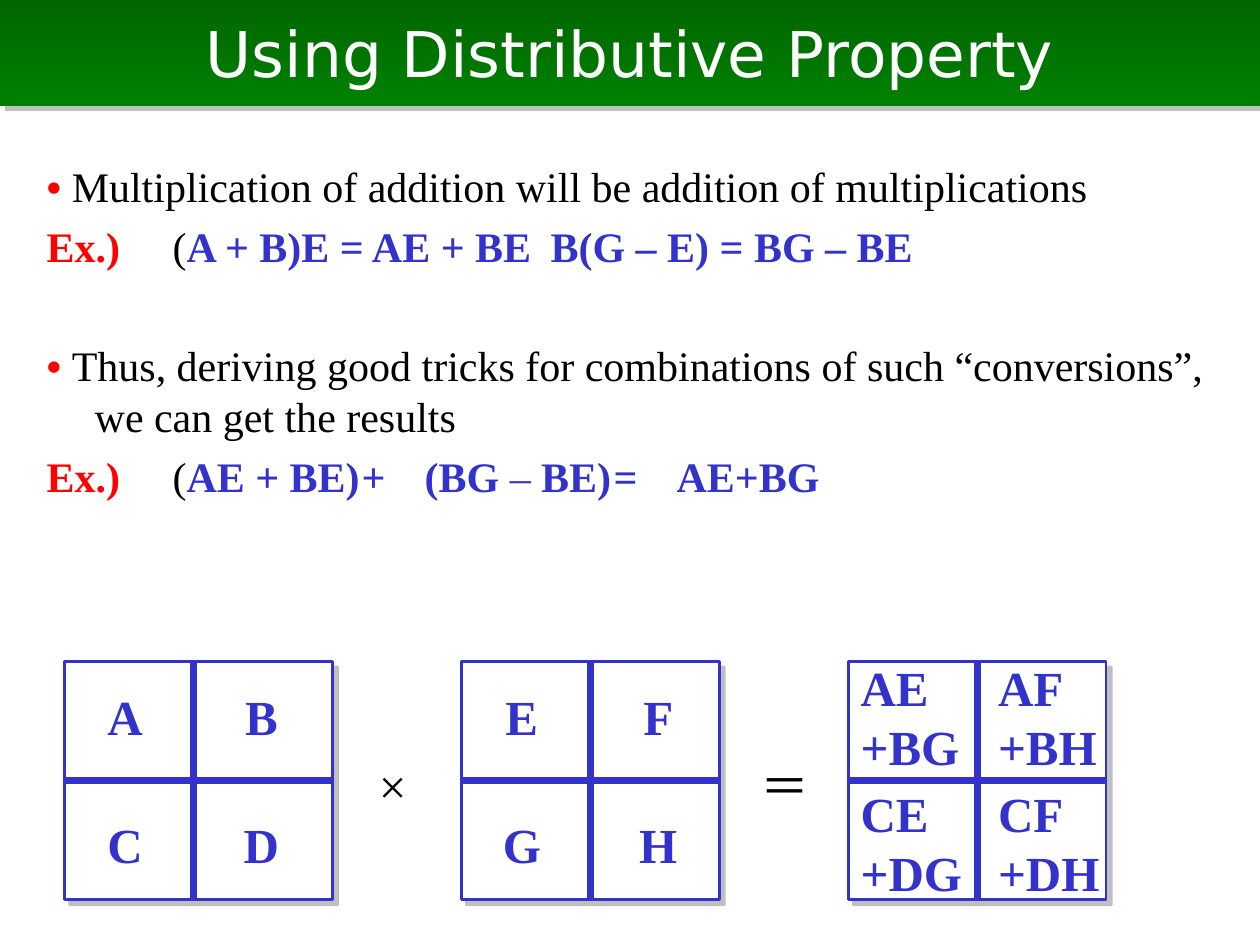
from dataclasses import dataclass

from lxml.etree import SubElement
from pptx import Presentation
from pptx.dml.color import RGBColor
from pptx.enum.shapes import MSO_CONNECTOR, MSO_SHAPE
from pptx.enum.text import MSO_ANCHOR, PP_ALIGN
from pptx.oxml.ns import qn
from pptx.util import Cm, Pt

BLACK, WHITE, RED, BLUE, GREY = "000000", "FFFFFF", "FF0000", "3333CC", "808080"
SERIF, SANS = "Times New Roman", "DejaVu Sans"


@dataclass
class Span:
    text: str
    color: str = BLACK
    bold: bool = False


@dataclass
class Line:
    spans: list[Span]
    before: float = 5.5
    hanging: float = 0
    tabs: tuple[float, ...] = ()


@dataclass
class Matrix:
    left: float
    width: float
    entries: list[list[str]]
    columns: tuple[float, float] = (-0.13, 2.62)
    rows: tuple[float, float] = (0.38, 2.95)
    align: PP_ALIGN = PP_ALIGN.CENTER


# Matrix grid in centimetres
MATRIX_TOP, MATRIX_HEIGHT, COLUMN_WIDTH, LABEL_WIDTH = 13.34, 4.8, 2.6, 2.7


def rgb(color: str) -> RGBColor:
    return RGBColor.from_string(color)


def write(frame, lines: list[Line], *, size: float = 28, font: str = SERIF,
          align=PP_ALIGN.LEFT, anchor=MSO_ANCHOR.TOP, wrap: bool = True) -> None:
    frame.word_wrap = wrap
    frame.vertical_anchor = anchor
    for index, line in enumerate(lines):
        paragraph = frame.paragraphs[0] if index == 0 else frame.add_paragraph()
        paragraph.alignment = align
        paragraph.space_before = Pt(line.before)
        properties = paragraph._p.get_or_add_pPr()
        properties.set("marL", str(Cm(line.hanging)))
        properties.set("indent", str(-Cm(line.hanging)))
        if line.tabs:
            stops = SubElement(properties, qn("a:tabLst"))
            for position in line.tabs:
                SubElement(stops, qn("a:tab"), pos=str(Cm(position)), algn="l")
        for span in line.spans:
            run = paragraph.add_run()
            run.text = span.text
            run.font.size = Pt(size)
            run.font.name = font
            run.font.bold = span.bold
            run.font.color.rgb = rgb(span.color)


def add_text(slide, left: float, top: float, width: float, height: float,
             lines: list[Line], **text_format) -> None:
    box = slide.shapes.add_textbox(Cm(left), Cm(top), Cm(width), Cm(height))
    write(box.text_frame, lines, **text_format)


def add_panel(slide, left: float, top: float, width: float, height: float):
    """Rectangle with a hard, half-transparent shadow to the lower right."""
    panel = slide.shapes.add_shape(MSO_SHAPE.RECTANGLE, Cm(left), Cm(top), Cm(width), Cm(height))
    panel.shadow.inherit = False
    effects = panel._element.spPr.find(qn("a:effectLst"))
    shadow = SubElement(effects, qn("a:outerShdw"), blurRad="0", dist=str(Pt(4.2)),
                        dir="2700000", algn="ctr", rotWithShape="0")
    color = SubElement(shadow, qn("a:srgbClr"), val=GREY)
    SubElement(color, qn("a:alpha"), val="50000")
    return panel


def add_divider(slide, x1: float, y1: float, x2: float, y2: float) -> None:
    divider = slide.shapes.add_connector(MSO_CONNECTOR.STRAIGHT, Cm(x1), Cm(y1), Cm(x2), Cm(y2))
    divider.line.color.rgb = rgb(BLUE)
    divider.line.width = Pt(4)
    SubElement(divider._element.spPr, qn("a:effectLst"))


def add_matrix(slide, matrix: Matrix) -> None:
    panel = add_panel(slide, matrix.left, MATRIX_TOP, matrix.width, MATRIX_HEIGHT)
    panel.fill.solid()
    panel.fill.fore_color.rgb = rgb(WHITE)
    panel.line.color.rgb = rgb(BLUE)
    panel.line.width = Pt(1.5)

    middle_x, middle_y = matrix.left + COLUMN_WIDTH, MATRIX_TOP + MATRIX_HEIGHT / 2
    add_divider(slide, matrix.left, middle_y, matrix.left + matrix.width, middle_y)
    add_divider(slide, middle_x, MATRIX_TOP, middle_x, MATRIX_TOP + MATRIX_HEIGHT)

    for row, entries in zip(matrix.rows, matrix.entries):
        for column, entry in zip(matrix.columns, entries):
            terms = [Line([Span(term, BLUE, True)], before=0) for term in entry.split("\n")]
            add_text(slide, matrix.left + column, MATRIX_TOP + row, LABEL_WIDTH,
                     0.25 + 1.18 * len(terms), terms, align=matrix.align)


def add_title(slide, title: str) -> None:
    banner = add_panel(slide, 0, 0, 25.4, 2.13)
    banner.line.fill.background()
    banner.fill.gradient()
    banner.fill.gradient_angle = 270
    for stop, color in zip(banner.fill.gradient_stops, ("006600", "008000")):
        stop.color.rgb = rgb(color)
    write(banner.text_frame, [Line([Span(title, WHITE)], before=0)], size=36, font=SANS,
          align=PP_ALIGN.CENTER, anchor=MSO_ANCHOR.MIDDLE)


def bullet(text: str, **spacing) -> Line:
    return Line([Span("• ", RED, True), Span(text)], hanging=0.97, **spacing)


def example(*formula: Span, tabs: tuple[float, ...]) -> Line:
    return Line([Span("Ex.)\t", RED, True), Span("("), *formula], tabs=tabs)


EXPLANATION = [
    bullet("Multiplication of addition will be addition of multiplications"),
    example(Span("A + B)E = AE + BE\tB(G – E) = BG – BE", BLUE, True), tabs=(2.12, 10.42)),
    bullet("Thus, deriving good tricks for combinations of such “conversions”, "
           "we can get the results", before=39),
    example(Span("AE + BE)\t+\t(BG ", BLUE, True), Span("–", BLUE),
            Span(" BE)\t=\tAE+BG", BLUE, True), tabs=(2.12, 6.75, 8.29, 12.68, 14.2)),
]

MATRICES = [
    Matrix(1.3, 5.41, [["A", "B"], ["C", "D"]]),
    Matrix(9.3, 5.2, [["E", "F"], ["G", "H"]]),
    Matrix(17.1, 5.2, [["AE\n+BG", "AF\n+BH"], ["CE\n+DG", "CF\n+DH"]],
           columns=(0, 2.77), rows=(-0.2, 2.34), align=PP_ALIGN.LEFT),
]

OPERATORS = {"×": 7.39, "＝": 15.09}


def main() -> None:
    presentation = Presentation()
    presentation.slide_width, presentation.slide_height = Cm(25.4), Cm(19.05)
    slide = presentation.slides.add_slide(presentation.slide_layouts[6])

    # Title and explanation
    add_title(slide, "Using Distributive Property")
    add_text(slide, 0.69, 3.12, 24, 15.39, EXPLANATION, size=24)

    # Matrix product
    for matrix in MATRICES:
        add_matrix(slide, matrix)
    for operator, left in OPERATORS.items():
        add_text(slide, left, 15.1, 1.5, 1.45, [Line([Span(operator)], before=0)], wrap=False)

    presentation.save("out.pptx")


if __name__ == "__main__":
    main()
